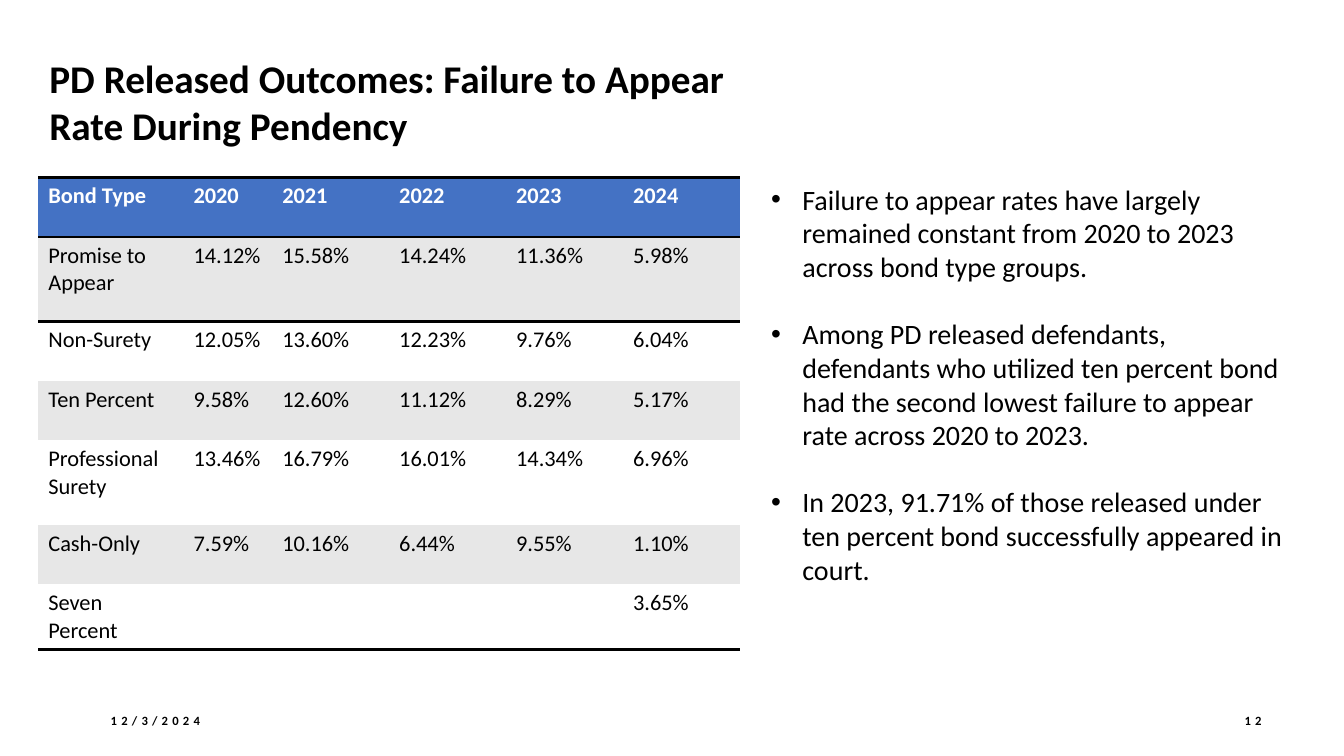
from lxml.etree import SubElement
from pptx import Presentation
from pptx.dml.color import RGBColor
from pptx.enum.text import MSO_ANCHOR, MSO_AUTO_SIZE, PP_ALIGN
from pptx.oxml.ns import qn
from pptx.util import Pt

EMU_PER_PX = 9144
BLACK = RGBColor(0x00, 0x00, 0x00)
WHITE = RGBColor(0xFF, 0xFF, 0xFF)
HEADER_BLUE = RGBColor(0x44, 0x72, 0xC4)
BAND_GRAY = RGBColor(0xE7, 0xE7, 0xE7)
PLAIN_TABLE_STYLE = "{2D5ABB26-0587-4C30-8999-92F81FD0307C}"

COLUMN_WIDTHS = [144, 88] + [116] * 4
ROW_HEIGHTS = [59, 84, 59, 59, 84, 59, 59]
FAILURE_RATES = [
    ["Bond Type", "2020", "2021", "2022", "2023", "2024"],
    ["Promise to Appear", "14.12%", "15.58%", "14.24%", "11.36%", "5.98%"],
    ["Non-Surety", "12.05%", "13.60%", "12.23%", "9.76%", "6.04%"],
    ["Ten Percent", "9.58%", "12.60%", "11.12%", "8.29%", "5.17%"],
    ["Professional Surety", "13.46%", "16.79%", "16.01%", "14.34%", "6.96%"],
    ["Cash-Only", "7.59%", "10.16%", "6.44%", "9.55%", "1.10%"],
    ["Seven Percent", "", "", "", "", "3.65%"],
]
FINDINGS = [
    "Failure to appear rates have largely remained constant from 2020 to 2023 "
    "across bond type groups.",
    "Among PD released defendants, defendants who utilized ten percent bond had "
    "the second lowest failure to appear rate across 2020 to 2023.",
    "In 2023, 91.71% of those released under ten percent bond successfully "
    "appeared in court.",
]


def px(length):
    return length * EMU_PER_PX


class SlideBuilder:
    """Holds the text style and current slide, and adds each kind of element."""

    def __init__(self, slide, font_name="Calibri"):
        self.slide = slide
        self.font_name = font_name

    def add_run(self, paragraph, text, size, color=BLACK, bold=False):
        run = paragraph.add_run()
        run.text = text
        run.font.name = self.font_name
        run.font.size = Pt(size)
        run.font.bold = bold
        run.font.color.rgb = color
        return run

    def add_title(self, text, left, top, width, height):
        title = self.slide.shapes.title
        title.left, title.top = px(left), px(top)
        title.width, title.height = px(width), px(height)
        title.fill.solid()
        title.fill.fore_color.rgb = WHITE
        frame = title.text_frame
        frame.word_wrap = True
        frame.auto_size = MSO_AUTO_SIZE.NONE
        frame.vertical_anchor = MSO_ANCHOR.TOP
        paragraph = frame.paragraphs[0]
        paragraph.alignment = PP_ALIGN.LEFT
        self.add_run(paragraph, text, 28, bold=True)

    def add_text_frame(self, left, top, width, height, anchor=MSO_ANCHOR.TOP):
        box = self.slide.shapes.add_textbox(px(left), px(top), px(width), px(height))
        box.text_frame.word_wrap = True
        box.text_frame.vertical_anchor = anchor
        return box.text_frame

    def add_footer(self, text, left, width, alignment):
        frame = self.add_text_frame(left, 695, width, 40, MSO_ANCHOR.MIDDLE)
        paragraph = frame.paragraphs[0]
        paragraph.alignment = alignment
        run = self.add_run(paragraph, text, 9, bold=True)
        run.font._element.set("spc", "300")

    def add_bullets(self, texts, left, top, width, height):
        frame = self.add_text_frame(left, top, width, height)
        for index, text in enumerate(texts):
            paragraph = frame.add_paragraph() if index else frame.paragraphs[0]
            paragraph.space_before = Pt(24 if index else 0)
            properties = paragraph._p.get_or_add_pPr()
            properties.set("marL", str(px(31)))
            properties.set("indent", str(-px(31)))
            SubElement(properties, qn("a:buFont"), typeface="Arial")
            SubElement(properties, qn("a:buChar"), char="•")
            self.add_run(paragraph, text, 20)

    def add_border(self, cell, side):
        line = SubElement(cell._tc.get_or_add_tcPr(), qn(f"a:{side}"), w=str(Pt(2)))
        fill = SubElement(line, qn("a:solidFill"))
        SubElement(fill, qn("a:srgbClr"), val=str(BLACK))

    def add_table(self, rows, widths, heights, left, top):
        frame = self.slide.shapes.add_table(
            len(rows), len(widths), px(left), px(top), px(sum(widths)), px(sum(heights))
        )
        table = frame.table
        table._tbl.tblPr.find(qn("a:tableStyleId")).text = PLAIN_TABLE_STYLE
        for column, width in zip(table.columns, widths):
            column.width = px(width)
        for row_index, texts in enumerate(rows):
            table.rows[row_index].height = px(heights[row_index])
            is_header = row_index == 0
            band = BAND_GRAY if row_index % 2 else WHITE
            for column_index, text in enumerate(texts):
                cell = table.cell(row_index, column_index)
                if row_index <= 1:
                    self.add_border(cell, "lnT")
                if row_index in (0, len(rows) - 1):
                    self.add_border(cell, "lnB")
                cell.fill.solid()
                cell.fill.fore_color.rgb = HEADER_BLUE if is_header else band
                if text:
                    color = WHITE if is_header else BLACK
                    paragraph = cell.text_frame.paragraphs[0]
                    self.add_run(paragraph, text, 16, color, is_header)


def main():
    presentation = Presentation()
    presentation.slide_width = px(1333)
    presentation.slide_height = px(750)
    title_only = presentation.slide_layouts[5]
    builder = SlideBuilder(presentation.slides.add_slide(title_only))
    builder.add_title(
        "PD Released Outcomes: Failure to Appear Rate During Pendency", 39, 49, 701, 104
    )
    builder.add_table(FAILURE_RATES, COLUMN_WIDTHS, ROW_HEIGHTS, 38, 176)
    builder.add_bullets(FINDINGS, 755, 176, 530, 505)
    builder.add_footer("12/3/2024", 100, 300, PP_ALIGN.LEFT)
    builder.add_footer("12", 1182, 79, PP_ALIGN.RIGHT)
    presentation.save("out.pptx")


if __name__ == "__main__":
    main()
